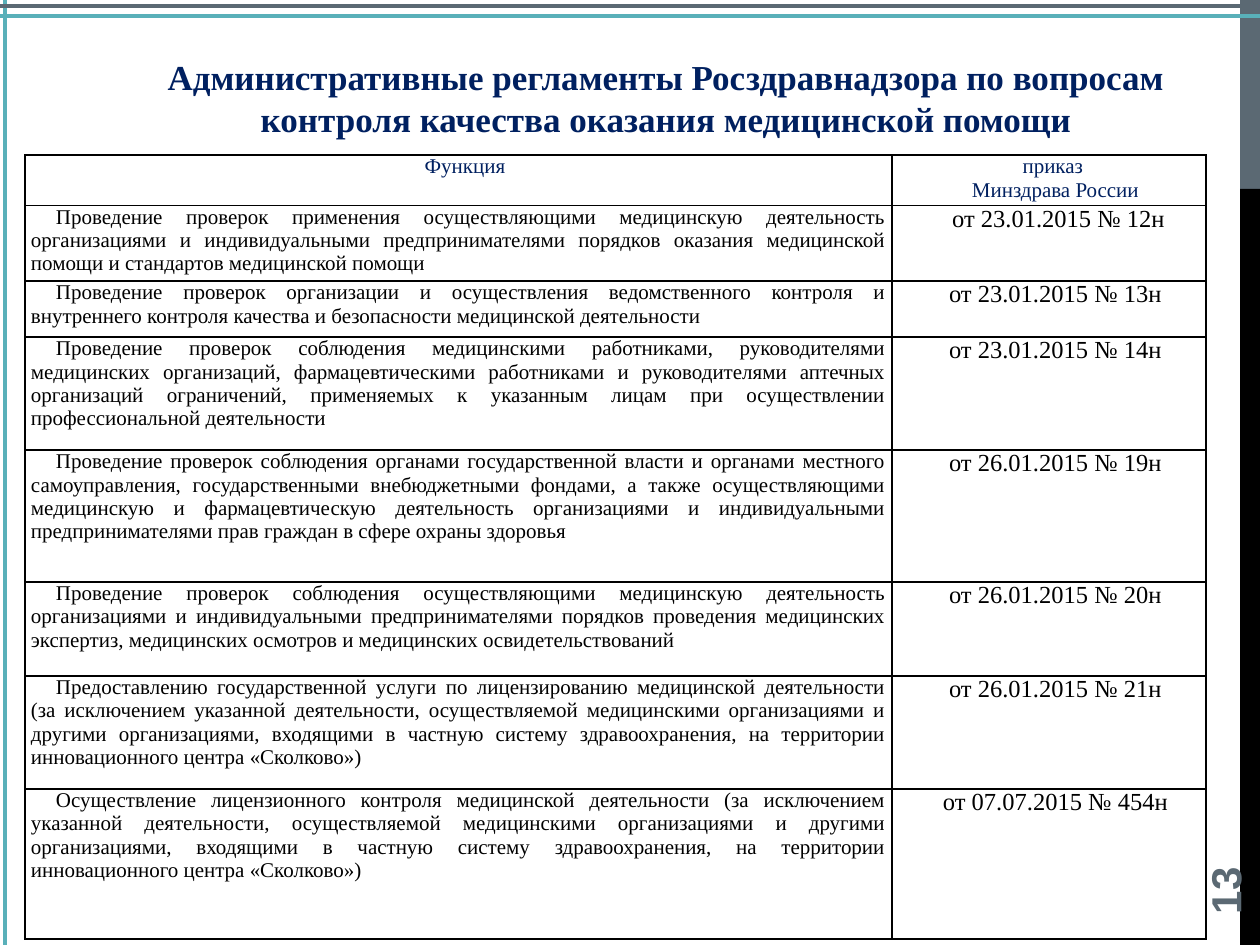
from pptx import Presentation
from pptx.dml.color import RGBColor
from pptx.enum.shapes import MSO_CONNECTOR, MSO_SHAPE
from pptx.enum.text import MSO_ANCHOR, PP_ALIGN
from pptx.oxml import parse_xml
from pptx.oxml.ns import nsdecls
from pptx.oxml.xmlchemy import OxmlElement
from pptx.util import Emu, Pt

SERIF = "Times New Roman"
NAVY, TEAL, SLATE, BLACK, WHITE = "002060", "59B0B9", "5B6973", "000000", "FFFFFF"


def px(num):
    return Emu(round(num * 914400 / 126))


def style(para, size, color, face=SERIF, bold=False):
    for run in para.runs:
        run.font.size = Pt(size)
        run.font.name = face
        run.font.bold = bold
        run.font.color.rgb = RGBColor.from_string(color)


deck = Presentation()
deck.slide_width, deck.slide_height = px(1260), px(945)
slide = deck.slides.add_slide(deck.slide_layouts[6])
shapes = slide.shapes

# Right side bars
for top, high, color in [(0, 189, SLATE), (189, 756, BLACK)]:
    bar = shapes.add_shape(MSO_SHAPE.RECTANGLE, px(1240), px(top), px(20), px(high))
    bar.shadow.inherit = False
    bar.fill.solid()
    bar.fill.fore_color.rgb = RGBColor.from_string(color)
    bar.line.fill.background()

# Frame lines
for x1, y1, x2, y2, color in [
    (1260, 16, 0, 16, TEAL),
    (5, 0, 5, 945, TEAL),
    (0, 6, 1260, 6, SLATE),
]:
    line = shapes.add_connector(MSO_CONNECTOR.STRAIGHT, px(x1), px(y1), px(x2), px(y2))
    line.line.width = Pt(2.25)
    line.line.color.rgb = RGBColor.from_string(color)
    line._element.spPr.append(OxmlElement("a:effectLst"))

# Page number
page = shapes.add_textbox(px(1134), px(811), px(181), px(50))
page.rotation = 270
frame = page.text_frame
frame.word_wrap = True
frame.vertical_anchor = MSO_ANCHOR.MIDDLE
frame.text = "13"
style(frame.paragraphs[0], 24, SLATE, "Arial", True)

# Title
title = shapes.add_shape(MSO_SHAPE.RECTANGLE, px(98), px(37), px(1136), px(120))
title.shadow.inherit = False
title.fill.solid()
title.fill.fore_color.rgb = RGBColor.from_string(WHITE)
title.line.color.rgb = RGBColor.from_string(WHITE)
title.line.width = Pt(0.75)
frame = title.text_frame
frame.word_wrap = True
frame.vertical_anchor = MSO_ANCHOR.MIDDLE
frame.text = (
    "Административные регламенты Росздравнадзора по вопросам "
    "контроля качества оказания медицинской помощи"
)
frame.paragraphs[0].alignment = PP_ALIGN.CENTER
style(frame.paragraphs[0], 20, NAVY, bold=True)

# Table rows: height, function, order
rows = [
    (47, "Функция", "приказ \nМинздрава России"),
    (75, "Проведение проверок применения осуществляющими медицинскую деятельность "
         "организациями и индивидуальными предпринимателями порядков оказания "
         "медицинской помощи и стандартов медицинской помощи",
     " от 23.01.2015 № 12н"),
    (56, "Проведение проверок организации и осуществления ведомственного контроля и "
         "внутреннего контроля качества и безопасности медицинской деятельности",
     "от 23.01.2015 № 13н"),
    (113, "Проведение проверок соблюдения медицинскими работниками, руководителями "
          "медицинских организаций, фармацевтическими работниками и руководителями "
          "аптечных организаций ограничений, применяемых к указанным лицам при "
          "осуществлении профессиональной деятельности",
     "от 23.01.2015 № 14н"),
    (132, "Проведение проверок соблюдения органами государственной власти и органами "
          "местного самоуправления, государственными внебюджетными фондами, а также "
          "осуществляющими медицинскую и фармацевтическую деятельность организациями "
          "и индивидуальными предпринимателями прав граждан в сфере охраны здоровья",
     "от 26.01.2015 № 19н"),
    (94, "Проведение проверок соблюдения осуществляющими медицинскую деятельность "
         "организациями и индивидуальными предпринимателями порядков проведения "
         "медицинских экспертиз, медицинских осмотров и медицинских "
         "освидетельствований",
     "от 26.01.2015 № 20н"),
    (113, "Предоставлению государственной услуги по лицензированию медицинской "
          "деятельности (за исключением указанной деятельности, осуществляемой "
          "медицинскими организациями и другими организациями, входящими в частную "
          "систему здравоохранения, на территории инновационного центра «Сколково»)",
     "от 26.01.2015 № 21н"),
    (150, "Осуществление лицензионного контроля медицинской деятельности (за "
          "исключением указанной деятельности, осуществляемой медицинскими "
          "организациями и другими организациями, входящими в частную систему "
          "здравоохранения, на территории инновационного центра «Сколково»)",
     "от 07.07.2015 № 454н"),
]
cols = [867, 314]
high = sum(row[0] for row in rows)
grid = shapes.add_table(len(rows), 2, px(25), px(155), px(sum(cols)), px(high)).table
grid.first_row = grid.horz_banding = False
for col, wide in zip(grid.columns, cols):
    col.width = px(wide)

# Table cells
for r, (high, *texts) in enumerate(rows):
    grid.rows[r].height = px(high)
    for c, text in enumerate(texts):
        cell = grid.cell(r, c)
        cell.margin_left = cell.margin_right = px(6)
        cell.margin_top = cell.margin_bottom = 0
        props = cell._tc.get_or_add_tcPr()
        for side in "LRTB":
            props.append(parse_xml(
                f'<a:ln{side} {nsdecls("a")} w="12700"><a:solidFill>'
                f'<a:srgbClr val="{BLACK}"/></a:solidFill></a:ln{side}>'
            ))
        cell.fill.background()
        cell.text_frame.text = text
        body = r > 0 and c == 0
        for para in cell.text_frame.paragraphs:
            para.alignment = PP_ALIGN.JUSTIFY if body else PP_ALIGN.CENTER
            para._p.get_or_add_pPr().set("indent", str(px(25 if body else 13)))
            style(para, 14 if r and c else 12, BLACK if r else NAVY)

deck.save("out.pptx")
